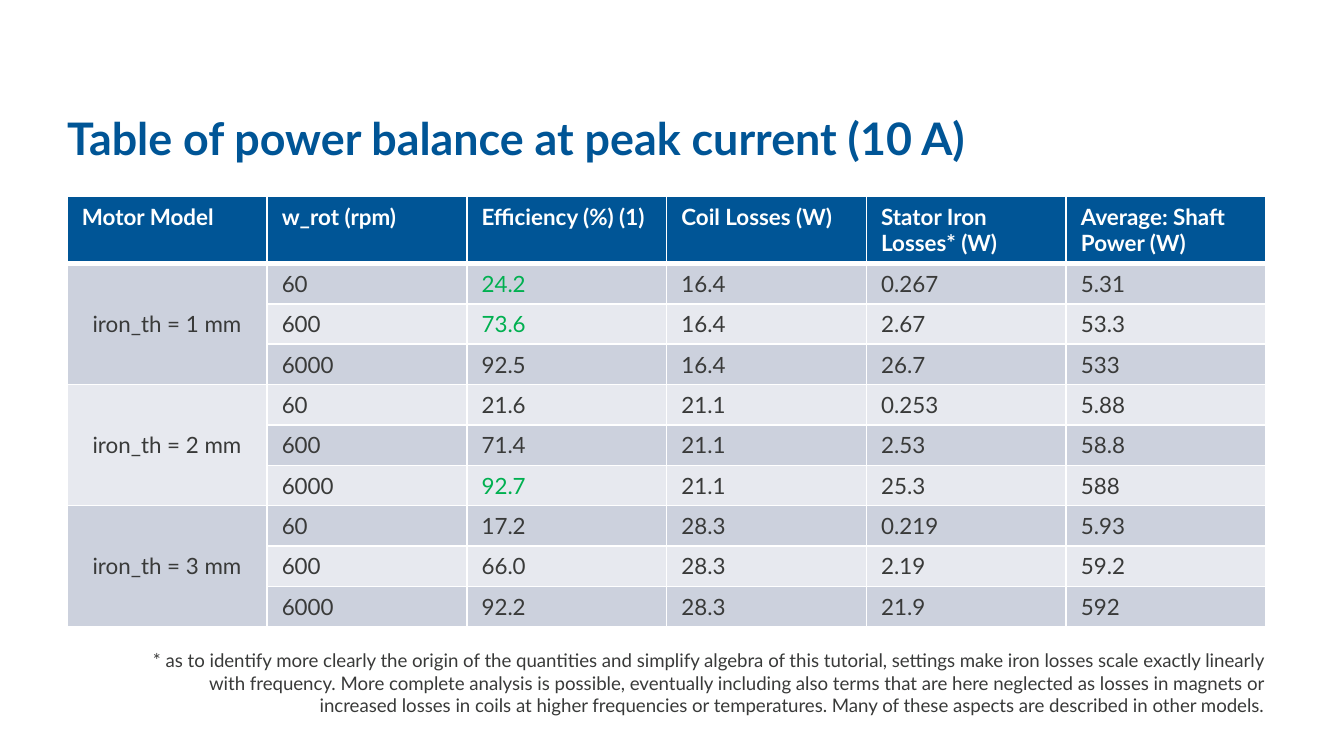
"""Build a slide with a table of motor power balance at peak current."""
from lxml import etree
from pptx import Presentation
from pptx.dml.color import RGBColor
from pptx.enum import text as t
from pptx.oxml import ns
from pptx.util import Inches, Pt

HUES = {"blue": "005596", "white": "FFFFFF", "ink": "393A39",
        "green": "00B050", "dark": "CCD1DD", "light": "E7E9EF"}
FONT = "Lato"
TITLE = "Table of power balance at peak current (10 A)"
NOTE = ("* as to identify more clearly the origin of the quantities and simplify "
        "algebra of this tutorial, settings make iron losses scale exactly linearly "
        "with frequency. More complete analysis is possible, eventually including "
        "also terms that are here neglected as losses in magnets or increased losses "
        "in coils at higher frequencies or temperatures. Many of these aspects are "
        "described in other models.")
HEADS = ["Motor Model", "w_rot (rpm)", "Efficiency (%) (1)", "Coil Losses (W)",
         "Stator Iron Losses* (W)", "Average: Shaft Power (W)"]
MODELS = {
    "iron_th = 1 mm": [("60", "24.2", "16.4", "0.267", "5.31"),
                       ("600", "73.6", "16.4", "2.67", "53.3"),
                       ("6000", "92.5", "16.4", "26.7", "533")],
    "iron_th = 2 mm": [("60", "21.6", "21.1", "0.253", "5.88"),
                       ("600", "71.4", "21.1", "2.53", "58.8"),
                       ("6000", "92.7", "21.1", "25.3", "588")],
    "iron_th = 3 mm": [("60", "17.2", "28.3", "0.219", "5.93"),
                       ("600", "66.0", "28.3", "2.19", "59.2"),
                       ("6000", "92.2", "28.3", "21.9", "592")],
}
BEST = {"24.2", "73.6", "92.7"}
STEP = 3
LEFT, TOP, WIDTH = 0.5, 1.46, 8.92
HEAD_H, ROW_H = 0.5, 0.3


def write(frame, words, size, hue, bold=False, align=t.PP_ALIGN.LEFT):
    para = frame.paragraphs[0]
    para.text = words
    para.alignment = align
    font = para.font
    font.name, font.size, font.bold = FONT, Pt(size), bold
    font.color.rgb = RGBColor.from_string(HUES[hue])
    return para


def label(slide, box, words, *style, **extra):
    frame = slide.shapes.add_textbox(*map(Inches, box)).text_frame
    frame.word_wrap = True
    return frame, write(frame, words, *style, **extra)


def edge(cell, side, width):
    props = cell._tc.get_or_add_tcPr()
    line = etree.SubElement(props, ns.qn("a:ln" + side), w=str(Pt(width)))
    fill = etree.SubElement(line, ns.qn("a:solidFill"))
    etree.SubElement(fill, ns.qn("a:srgbClr"), val=HUES["white"])


def paint(cell, row, hue):
    for side in "LRTB":
        thick = (row, side) in ((0, "B"), (1, "T"))
        edge(cell, side, 3 if thick else 1)
    cell.fill.solid()
    cell.fill.fore_color.rgb = RGBColor.from_string(HUES[hue])
    cell.margin_left = cell.margin_right = Inches(0.11)
    cell.margin_top = cell.margin_bottom = Inches(0.05)


def add_grid(slide):
    count = 1 + STEP * len(MODELS)
    height = HEAD_H + ROW_H * (count - 1)
    grid = slide.shapes.add_table(count, len(HEADS), *map(
        Inches, (LEFT, TOP, WIDTH, height))).table
    for col in grid.columns:
        col.width = Inches(WIDTH / len(HEADS))
    for row, line in enumerate(grid.rows):
        line.height = Inches(ROW_H if row else HEAD_H)
        hue = ("light", "dark")[row % 2] if row else "blue"
        for cell in line.cells:
            paint(cell, row, hue)
    for col, head in enumerate(HEADS):
        write(grid.cell(0, col).text_frame, head, 12, "white", True)
    for num, (model, rows) in enumerate(MODELS.items()):
        first = 1 + num * STEP
        cell = grid.cell(first, 0)
        cell.merge(grid.cell(first + STEP - 1, 0))
        cell.vertical_anchor = t.MSO_ANCHOR.MIDDLE
        write(cell.text_frame, model, 12, "ink", align=t.PP_ALIGN.CENTER)
        for row, values in enumerate(rows, first):
            for col, value in enumerate(values, 1):
                hue = "green" if col == 2 and value in BEST else "ink"
                write(grid.cell(row, col).text_frame, value, 12, hue)


def main():
    deck = Presentation()
    deck.slide_width = Inches(10)
    deck.slide_height = Inches(10 * 9 / 16)
    slide = deck.slides.add_slide(deck.slide_layouts[6])
    frame, para = label(slide, (LEFT, 0.64, 9.08, 0.81), TITLE, 24, "blue", True)
    frame.margin_left = 0
    frame.vertical_anchor = t.MSO_ANCHOR.MIDDLE
    para.line_spacing = 0.9
    add_grid(slide)
    frame, para = label(slide, (1, 4.78, 8.5, 0.61), NOTE, 10, "ink",
                        align=t.PP_ALIGN.RIGHT)
    frame.auto_size = t.MSO_AUTO_SIZE.SHAPE_TO_FIT_TEXT
    deck.save("out.pptx")


if __name__ == "__main__":
    main()
